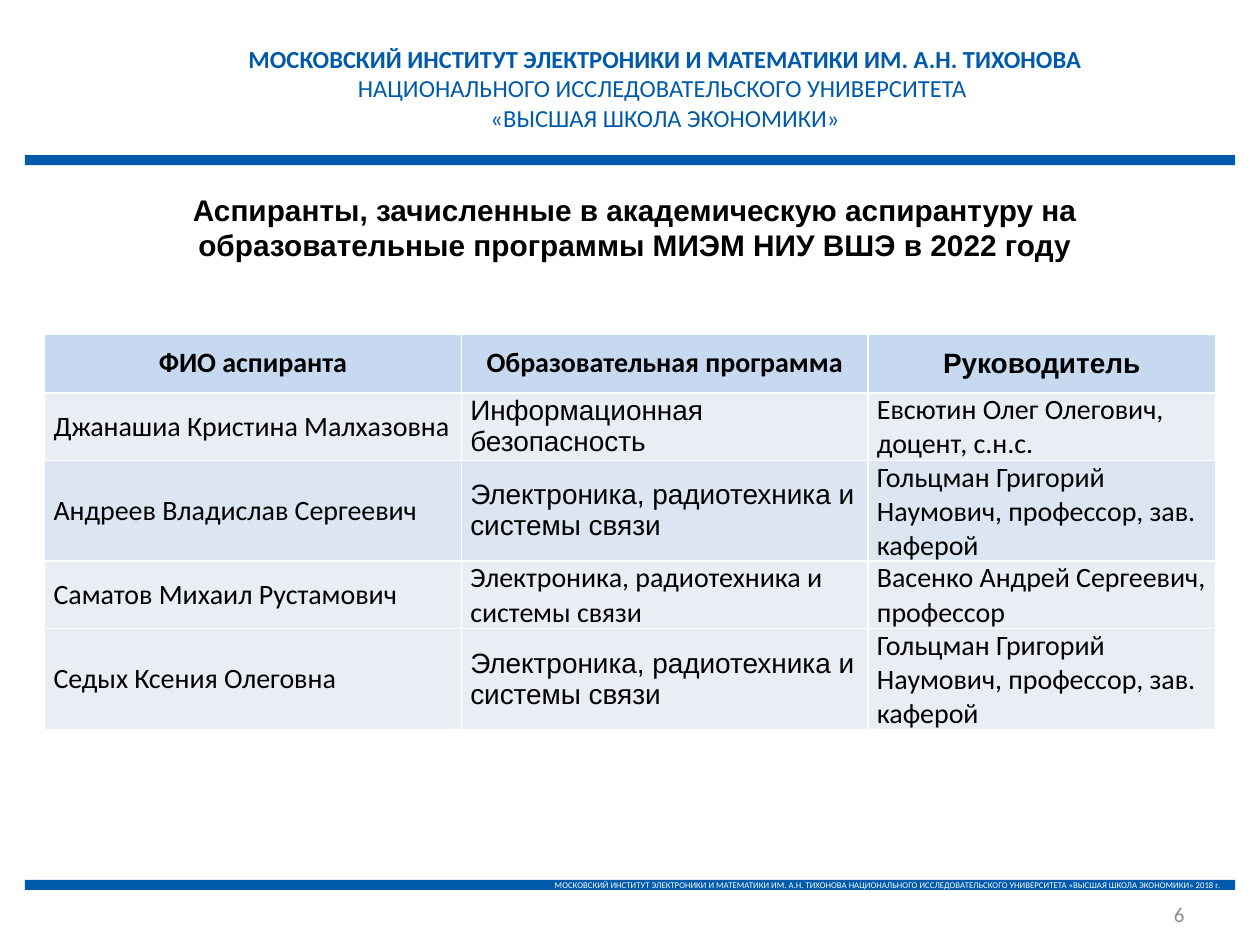
"""Build the slide listing the postgraduates enrolled in 2022."""
import pptx
import pptx.dml.color
import pptx.enum.shapes
import pptx.enum.text
import pptx.oxml
import pptx.oxml.ns
import pptx.util

Cm, Pt = pptx.util.Cm, pptx.util.Pt
ALIGN = pptx.enum.text.PP_ALIGN
MIDDLE = pptx.enum.text.MSO_ANCHOR.MIDDLE

COLORS = {
    "blue": "005AAB", "white": "FFFFFF", "black": "000000", "gray": "8C8C8C",
    "head": "C6D9F1", "light": "E9EDF4", "accent": "DCE6F2",
}
INSTITUTE = "МОСКОВСКИЙ ИНСТИТУТ ЭЛЕКТРОНИКИ И МАТЕМАТИКИ ИМ. А.Н. ТИХОНОВА"
UNIVERSITY = "НАЦИОНАЛЬНОГО ИССЛЕДОВАТЕЛЬСКОГО УНИВЕРСИТЕТА"
SCHOOL = "«ВЫСШАЯ ШКОЛА ЭКОНОМИКИ»"
TITLE = ("Аспиранты, зачисленные в академическую аспирантуру на "
         "образовательные программы МИЭМ НИУ ВШЭ в 2022 году")
ELECTRONICS = "Электроника, радиотехника и системы связи"
GOLTSMAN = "Гольцман Григорий Наумович, профессор, зав. каферой"
HEADERS = ["ФИО аспиранта", "Образовательная программа", "Руководитель"]
STUDENTS = [
    ["Джанашиа Кристина Малхазовна", "Информационная безопасность",
     "Евсютин Олег Олегович, доцент, с.н.с."],
    ["Андреев Владислав Сергеевич", ELECTRONICS, GOLTSMAN],
    ["Саматов Михаил Рустамович", ELECTRONICS,
     "Васенко Андрей Сергеевич, профессор"],
    ["Седых Ксения Олеговна", ELECTRONICS, GOLTSMAN],
]
ARIAL_CELLS = {(0, 2), (1, 1), (2, 1), (4, 1)}
ROW_FILLS = ["head", "light", "accent", "light", "light"]
COL_WIDTHS = [8.4, 8.2, 7]
ROW_HEIGHTS = [1.19, 1.36, 2.03, 1.36, 2.03]


def rgb(name):
    """Return the named colour as an RGBColor."""
    return pptx.dml.color.RGBColor.from_string(COLORS[name])


def write(p, text, align, color, **fmt):
    """Fill a paragraph with formatted text."""
    p.text = text
    p.alignment = align
    for r in p.runs:
        for key, value in fmt.items():
            setattr(r.font, key, value)
        r.font.color.rgb = rgb(color)


def add_bar(s, top):
    """Add a full-width blue bar and return its text frame."""
    sp = s.shapes.add_shape(pptx.enum.shapes.MSO_SHAPE.RECTANGLE,
                            Cm(0.5), Cm(top), Cm(24.4), Cm(0.2))
    sp.shadow.inherit = False
    sp.fill.solid()
    sp.fill.fore_color.rgb = rgb("blue")
    sp.line.fill.background()
    return sp.text_frame


def add_text(s, box, lines, anchor=MIDDLE):
    """Add a wrapping text box; each line is a tuple of write() arguments."""
    tf = s.shapes.add_textbox(*map(Cm, box)).text_frame
    tf.word_wrap = True
    tf.vertical_anchor = anchor
    for i, (text, align, color, fmt) in enumerate(lines):
        p = tf.add_paragraph() if i else tf.paragraphs[0]
        write(p, text, align, color, **fmt)


def set_borders(cell):
    """Put thin white borders before the fill of a cell."""
    tc_pr = cell._tc.get_or_add_tcPr()
    for i, side in enumerate("LRTB"):
        tc_pr.insert(i, pptx.oxml.parse_xml(
            f'<a:ln{side} {pptx.oxml.ns.nsdecls("a")} w="12700"><a:solidFill>'
            f'<a:srgbClr val="{COLORS["white"]}"/></a:solidFill></a:ln{side}>'))


def add_students(s):
    """Add the table of students, programmes and supervisors."""
    rows = [HEADERS] + STUDENTS
    table = s.shapes.add_table(
        len(rows), len(HEADERS), Cm(0.9), Cm(6.73),
        Cm(sum(COL_WIDTHS)), Cm(sum(ROW_HEIGHTS))).table
    for col, width in zip(table.columns, COL_WIDTHS):
        col.width = Cm(width)
    for i, row in enumerate(rows):
        table.rows[i].height = Cm(ROW_HEIGHTS[i])
        for j, text in enumerate(row):
            cell = table.cell(i, j)
            layout = {"margin_left": Cm(0.18), "margin_right": Cm(0.18),
                      "margin_top": 0, "margin_bottom": 0,
                      "vertical_anchor": MIDDLE}
            for key, value in layout.items():
                setattr(cell, key, value)
            cell.fill.solid()
            cell.fill.fore_color.rgb = rgb(ROW_FILLS[i])
            set_borders(cell)
            write(cell.text_frame.paragraphs[0], text,
                  ALIGN.LEFT if i else ALIGN.CENTER, "black", size=Pt(16),
                  name="Arial" if (i, j) in ARIAL_CELLS else "Calibri",
                  bold=i == 0)


def main():
    """Build and save the presentation."""
    prs = pptx.Presentation()
    prs.slide_width, prs.slide_height = Cm(25.4), Cm(19.05)
    s = prs.slides.add_slide(prs.slide_layouts[6])
    footer = add_bar(s, 17.74)
    footer.vertical_anchor = MIDDLE
    write(footer.paragraphs[0], f"{INSTITUTE} {UNIVERSITY} {SCHOOL} 2018 г.",
          ALIGN.RIGHT, "white", size=Pt(5), name="Calibri")
    add_bar(s, 3.13)
    heading = {"size": Pt(14), "name": "Calibri"}
    add_text(s, (4.72, 0.76, 17.38, 2.05), [
        (INSTITUTE, ALIGN.CENTER, "blue", {**heading, "bold": True}),
        (f"{UNIVERSITY} \v{SCHOOL}", ALIGN.CENTER, "blue", heading),
    ], pptx.enum.text.MSO_ANCHOR.TOP)
    add_students(s)
    add_text(s, (18.2, 18.14, 5.93, 0.56), [
        ("6", ALIGN.RIGHT, "gray", {"size": Pt(12), "name": "Calibri"})])
    add_text(s, (1.1, 3.73, 23.4, 1.7), [
        (TITLE, ALIGN.CENTER, "black",
         {"size": Pt(17), "name": "Arial", "bold": True})])
    prs.save("out.pptx")


if __name__ == "__main__":
    main()
